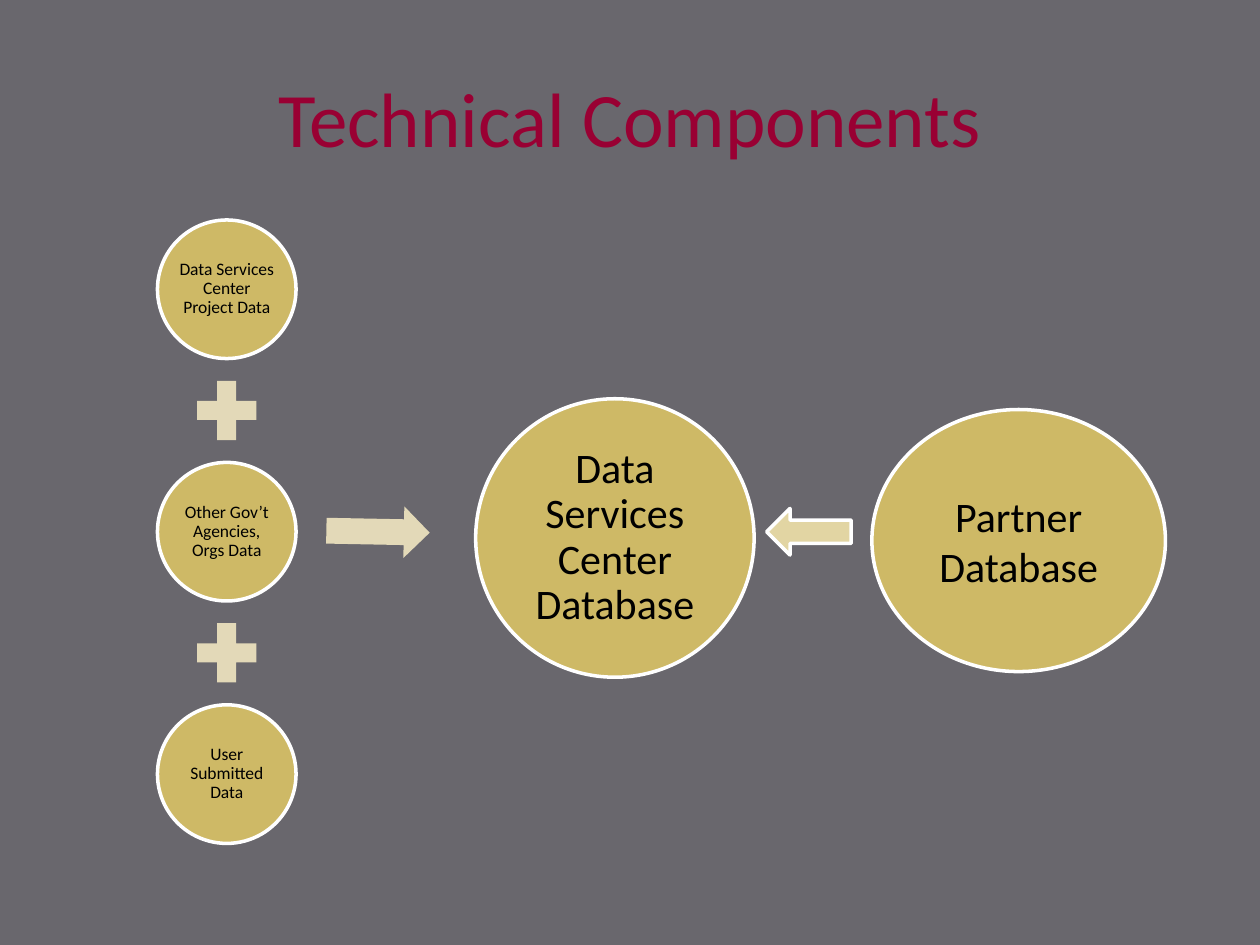
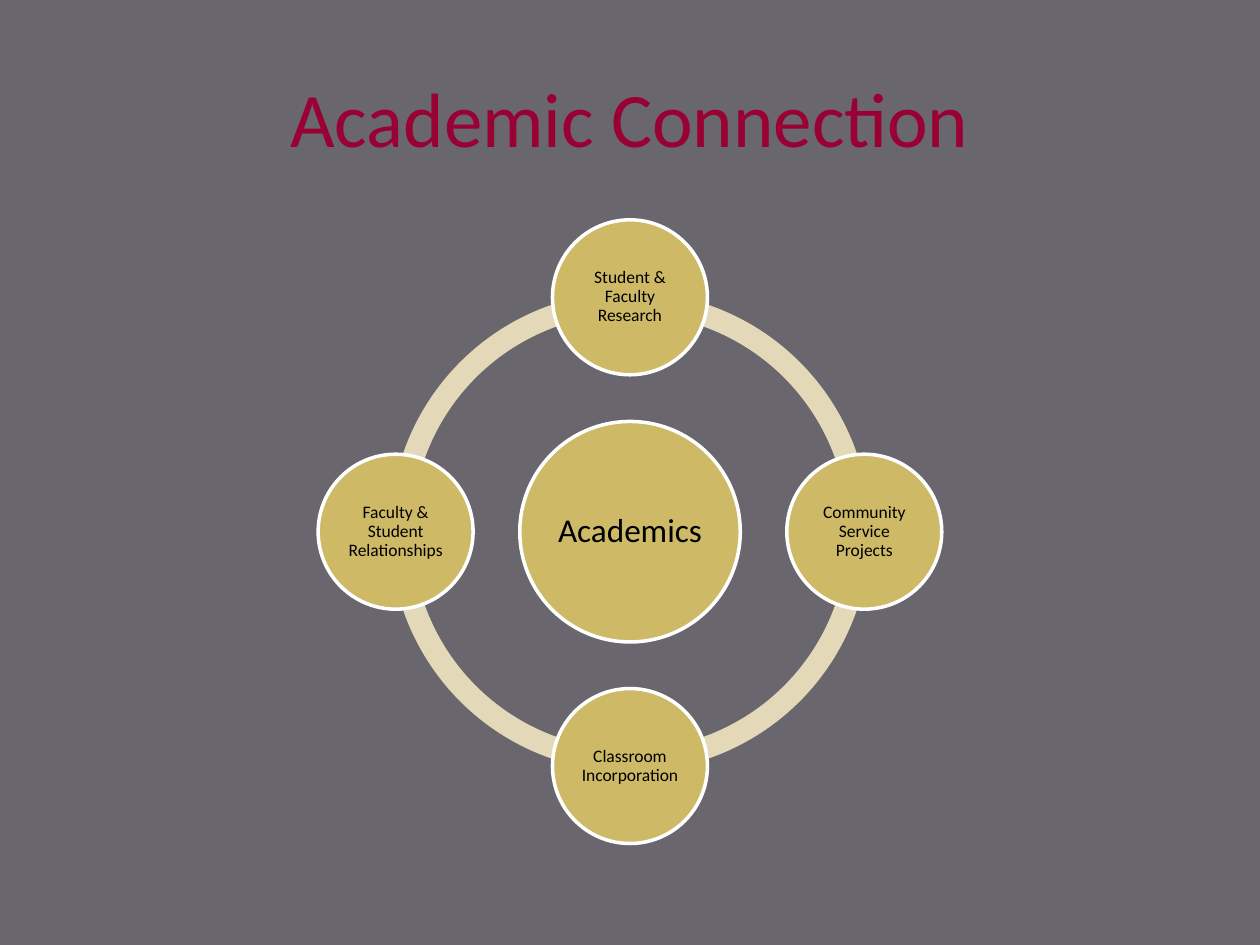
from pptx import Presentation
from pptx.dml.color import RGBColor
from pptx.enum.shapes import MSO_SHAPE
from pptx.enum.text import MSO_ANCHOR, PP_ALIGN
from pptx.util import Inches, Pt

ELLIPSE = MSO_SHAPE.OVAL
PLUS = MSO_SHAPE.MATH_PLUS
ARROW = MSO_SHAPE.RIGHT_ARROW
ARC = MSO_SHAPE.BLOCK_ARC
CENTER = PP_ALIGN.CENTER
MIDDLE = MSO_ANCHOR.MIDDLE

BACKGROUND = RGBColor(0x69, 0x67, 0x6D)
CRIMSON = RGBColor(0x99, 0x00, 0x33)
GOLD = RGBColor(0xCE, 0xB9, 0x66)
PALE_GOLD = RGBColor(0xE3, 0xD9, 0xB8)
SAND = RGBColor(0xE2, 0xD5, 0xA3)
WHITE = RGBColor(0xFF, 0xFF, 0xFF)
BLACK = RGBColor(0x00, 0x00, 0x00)
FONT = "Calibri"

presentation = Presentation()
presentation.slide_width = Inches(10)
presentation.slide_height = Inches(7.5)
COLUMN = presentation.slide_width // 100
ROW = presentation.slide_height // 75
MIDDLE_ROW = 42.2


def add_figure(slide, kind, column, row, width, height, fill, outlined=False):
    shape = slide.shapes.add_shape(
        kind,
        round((column - width / 2) * COLUMN),
        round((row - height / 2) * ROW),
        round(width * COLUMN),
        round(height * ROW),
    )
    shape.shadow.inherit = False
    shape.fill.solid()
    shape.fill.fore_color.rgb = fill
    if outlined:
        shape.line.color.rgb = WHITE
        shape.line.width = Pt(2)
    else:
        shape.line.fill.background()
    return shape


def write_text(shape, text, size, color=BLACK, inset=None, spacing=None):
    frame = shape.text_frame
    frame.word_wrap = True
    frame.vertical_anchor = MIDDLE
    if inset is not None:
        frame.margin_left = frame.margin_right = Inches(inset)
        frame.margin_top = frame.margin_bottom = Inches(inset)
    paragraph = frame.paragraphs[0]
    paragraph.alignment = CENTER
    if spacing is not None:
        paragraph.line_spacing = spacing
    run = paragraph.add_run()
    run.text = text
    run.font.name = FONT
    run.font.size = Pt(size)
    run.font.color.rgb = color


slides = []
for title in ("Technical Components", "Academic Connection"):
    slide = presentation.slides.add_slide(presentation.slide_layouts[6])
    slide.background.fill.solid()
    slide.background.fill.fore_color.rgb = BACKGROUND
    title_box = slide.shapes.add_textbox(5 * COLUMN, 3 * ROW, 90 * COLUMN, round(12.5 * ROW))
    write_text(title_box, title, 44, CRIMSON)
    slides.append(slide)
components_slide, academics_slide = slides

SOURCE_COLUMN = 18
SOURCE_PITCH = 19.24
sources = [
    "Data Services Center Project Data",
    "Other Gov’t Agencies, Orgs Data",
    "User Submitted Data",
]
for index, source in enumerate(sources):
    row = MIDDLE_ROW + (index - 1) * SOURCE_PITCH
    circle = add_figure(components_slide, ELLIPSE, SOURCE_COLUMN, row, 11, 11, GOLD, True)
    write_text(circle, source, 10, inset=0.01, spacing=0.9)
    if index < len(sources) - 1:
        add_figure(components_slide, PLUS, SOURCE_COLUMN, row + SOURCE_PITCH / 2, 6.4, 6.4, PALE_GOLD)

inflow_arrow = add_figure(components_slide, ARROW, 30, MIDDLE_ROW, 8.2, 4.1, PALE_GOLD)
inflow_arrow.rotation = 1.1
database = add_figure(components_slide, ELLIPSE, 48.8, 42.7, 22.1, 22.1, GOLD, True)
write_text(database, "Data Services Center Database", 24, inset=0.03, spacing=0.9)
partner = add_figure(components_slide, ELLIPSE, 80.85, 42.9, 23.3, 20.8, GOLD, True)
write_text(partner, "Partner Database", 24)
partner_arrow = add_figure(components_slide, ARROW, 64.2, MIDDLE_ROW, 6.7, 3.7, SAND, True)
partner_arrow.rotation = 180

HUB_COLUMN = 50
ORBIT = 18.6
QUARTER_TURN = 54
for quarter in range(4):
    arc = add_figure(academics_slide, ARC, HUB_COLUMN, MIDDLE_ROW, 38.1, 38.1, PALE_GOLD)
    arc.adjustments[0] = quarter * QUARTER_TURN
    arc.adjustments[1] = (quarter + 1) % 4 * QUARTER_TURN
    arc.adjustments[2] = 0.046

hub = add_figure(academics_slide, ELLIPSE, HUB_COLUMN, MIDDLE_ROW, 17.5, 17.5, GOLD, True)
write_text(hub, "Academics", 19, inset=0.03, spacing=0.9)

satellites = [
    ("Student & Faculty Research", 0, -1),
    ("Community Service Projects", 1, 0),
    ("Classroom Incorporation", 0, 1),
    ("Faculty & Student Relationships", -1, 0),
]
for label, across, down in satellites:
    satellite = add_figure(
        academics_slide, ELLIPSE,
        HUB_COLUMN + across * ORBIT, MIDDLE_ROW + down * ORBIT,
        12.3, 12.3, GOLD, True,
    )
    write_text(satellite, label, 10, inset=0.01, spacing=0.9)

presentation.save("out.pptx")
